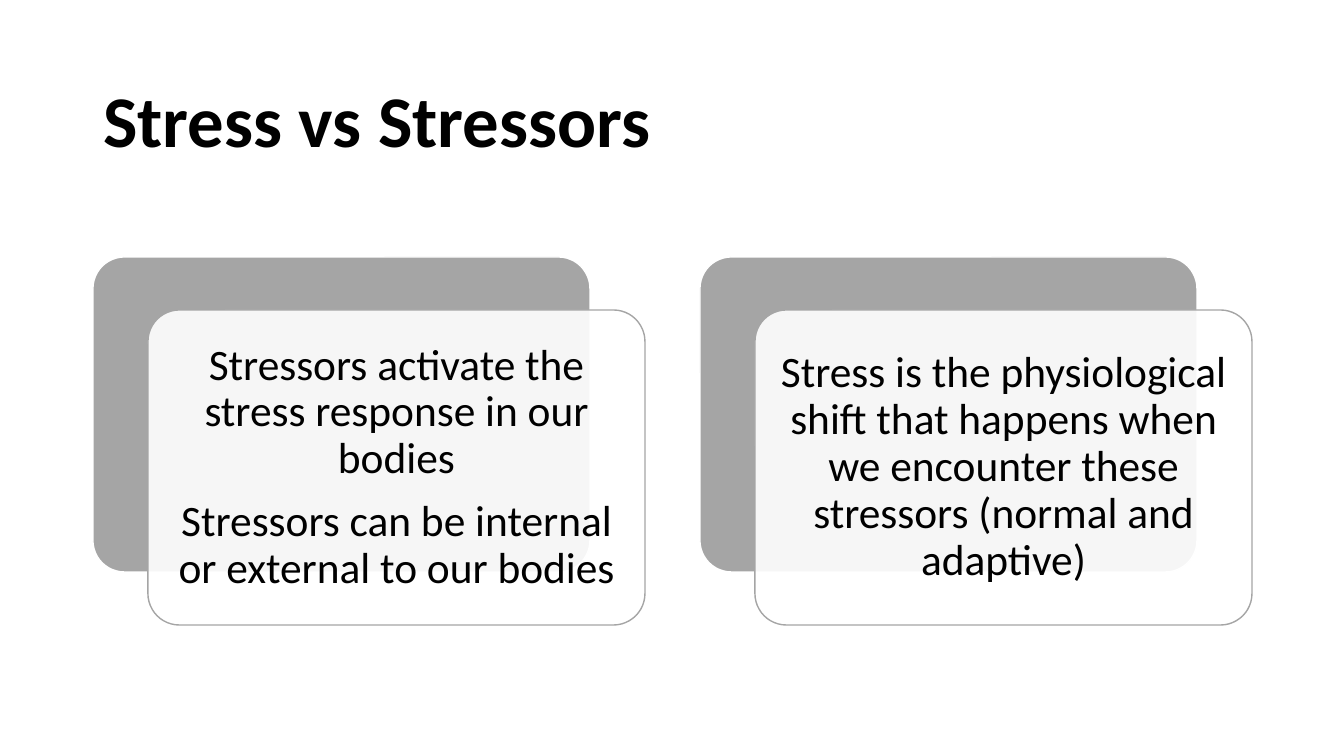
"""Builds the "Stress vs Stressors" slide with two layered cards."""
from dataclasses import dataclass

from lxml import etree
from pptx import Presentation
from pptx.dml.color import RGBColor
from pptx.enum.shapes import MSO_SHAPE
from pptx.enum.text import MSO_ANCHOR, MSO_AUTO_SIZE, PP_ALIGN
from pptx.oxml.ns import qn
from pptx.util import Emu, Pt

ROUNDED = MSO_SHAPE.ROUNDED_RECTANGLE
MIDDLE = MSO_ANCHOR.MIDDLE
NO_AUTOFIT = MSO_AUTO_SIZE.NONE
LEFT, CENTER = PP_ALIGN.LEFT, PP_ALIGN.CENTER
EMU_PER_PX = 914400 / 100.8
TITLE_ONLY = 5


def px(length):
    return Emu(round(length * EMU_PER_PX))


@dataclass(frozen=True)
class Theme:
    font: str = "Calibri"
    ink: RGBColor = RGBColor(0x00, 0x00, 0x00)
    paper: RGBColor = RGBColor(0xFF, 0xFF, 0xFF)
    gray: RGBColor = RGBColor(0xA5, 0xA5, 0xA5)
    title_size: int = 52
    body_size: int = 31
    paragraph_gap: int = 11
    line_spacing: float = 0.9
    card_opacity: int = 90
    corner: float = 0.1


class SlideBuilder:
    def __init__(self, slide, theme):
        self.slide = slide
        self.theme = theme

    def style(self, paragraph, size, align, bold=False):
        paragraph.alignment = align
        paragraph.line_spacing = self.theme.line_spacing
        paragraph.font.name = self.theme.font
        paragraph.font.size = Pt(size)
        paragraph.font.bold = bold
        paragraph.font.color.rgb = self.theme.ink

    def title(self, text, left, top, width, height):
        heading = self.slide.shapes.title
        heading.left, heading.top = px(left), px(top)
        heading.width, heading.height = px(width), px(height)
        frame = heading.text_frame
        frame.text = text
        frame.auto_size = NO_AUTOFIT
        frame.vertical_anchor = MIDDLE
        self.style(frame.paragraphs[0], self.theme.title_size, LEFT, bold=True)

    def panel(self, left, top, width, height, fill, outline, opacity=100):
        panel = self.slide.shapes.add_shape(
            ROUNDED, px(left), px(top), px(width), px(height))
        panel.adjustments[0] = self.theme.corner
        panel.shadow.inherit = False
        panel.fill.solid()
        panel.fill.fore_color.rgb = fill
        panel.line.color.rgb = outline
        panel.line.width = Pt(1)
        if opacity < 100:
            color = panel.fill._xPr.find(qn("a:solidFill"))[0]
            etree.SubElement(color, qn("a:alpha"), val=str(opacity * 1000))
        return panel

    def card(self, statements, left, top, width, height, shift, inset):
        theme = self.theme
        self.panel(left, top, width, height, theme.gray, theme.paper)
        front = self.panel(left + shift[0], top + shift[1], width, height,
                           theme.paper, theme.gray, theme.card_opacity)
        frame = front.text_frame
        frame.word_wrap = True
        frame.vertical_anchor = MIDDLE
        frame.margin_left = frame.margin_right = px(inset)
        frame.margin_top = frame.margin_bottom = px(inset)
        frame.text = "\n".join(statements)
        for paragraph in frame.paragraphs:
            paragraph.space_after = Pt(theme.paragraph_gap)
            self.style(paragraph, theme.body_size, CENTER)


def main():
    deck = Presentation()
    deck.slide_width, deck.slide_height = px(1344), px(756)
    slide = deck.slides.add_slide(deck.slide_layouts[TITLE_ONLY])
    builder = SlideBuilder(slide, Theme())

    builder.title("Stress vs Stressors", 93, 61, 1159, 125)
    cards = [
        ["Stressors activate the stress response in our bodies",
         "Stressors can be internal or external to our bodies"],
        ["Stress is the physiological shift that happens when we encounter "
         "these stressors (normal and adaptive)"],
    ]
    for index, statements in enumerate(cards):
        builder.card(statements, 93 + index * 607, 257, 497, 315,
                     shift=(55, 53), inset=13)

    deck.save("out.pptx")


if __name__ == "__main__":
    main()
